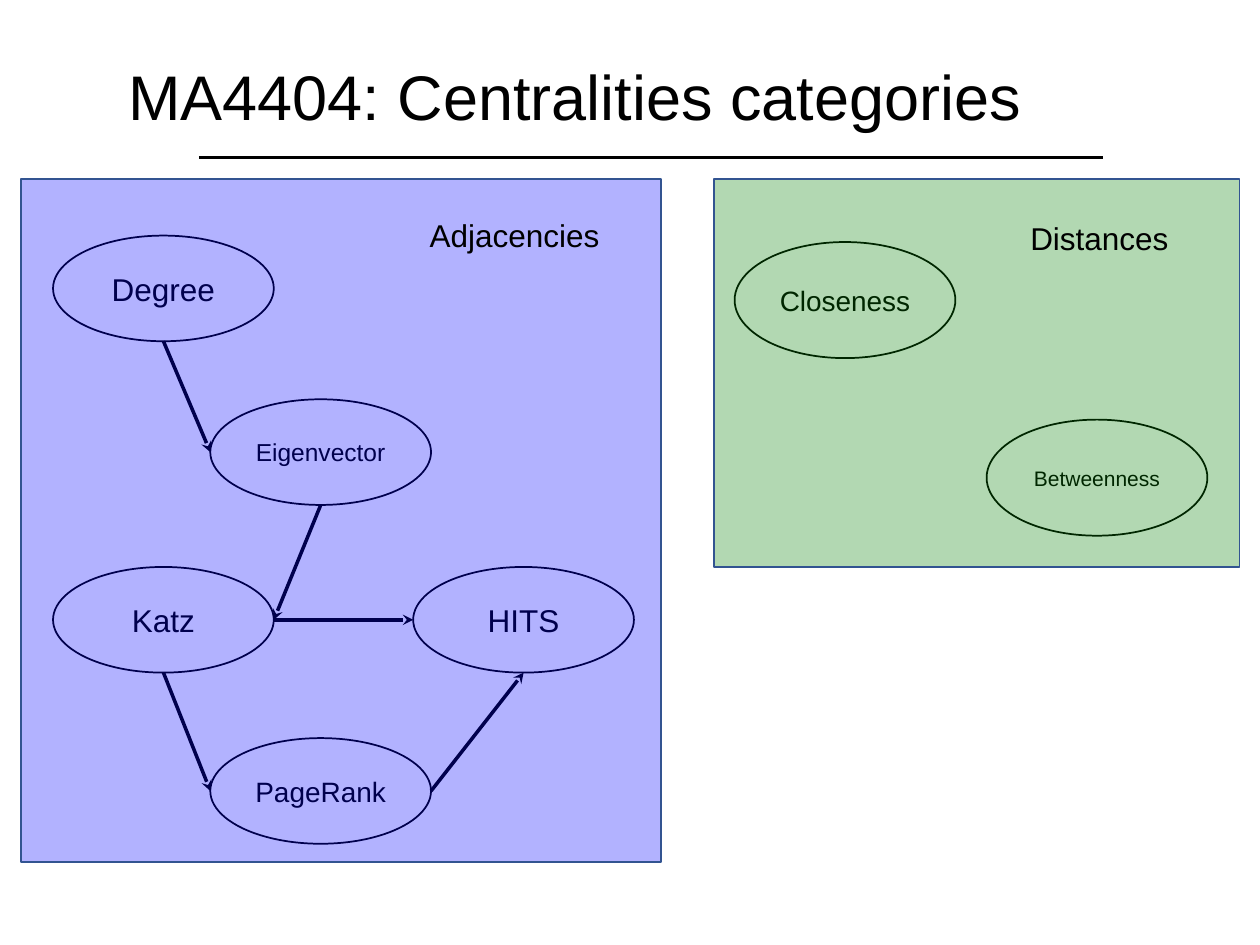
from dataclasses import dataclass

from lxml.etree import SubElement
from pptx import Presentation
from pptx.dml.color import RGBColor
from pptx.enum.shapes import MSO_CONNECTOR, MSO_SHAPE
from pptx.enum.text import MSO_ANCHOR, MSO_AUTO_SIZE, PP_ALIGN
from pptx.oxml.ns import qn
from pptx.util import Cm, Pt


@dataclass(frozen=True)
class Theme:
    font: str = "Arial"
    ink: str = "000000"
    border: str = "325491"
    title: int = 36
    label: int = 18
    rule: float = 1.5
    outline: float = 1
    arrow: float = 2
    alpha: int = 30


THEME = Theme()
TITLE = ("MA4404: Centralities categories", (2.34, 1.17, 21.16, 1.68))
RULE = ((4.01, 3.18), (22.23, 3.18))
NODE_W = 4.45
CATEGORIES = [
    {
        "label": ("Adjacencies", (8.41, 4.24, 3.96, 0.94)),
        "panel": ((0.43, 3.61, 12.9, 13.77), "0000FF"),
        "node_h": 2.13,
        "nodes": {
            "Degree": (1.07, 4.75, 18),
            "Eigenvector": (4.24, 8.05, 14),
            "Katz": (1.07, 11.43, 18),
            "PageRank": (4.24, 14.88, 16),
            "HITS": (8.33, 11.43, 18),
        },
        "links": [
            ("Degree", "bottom", "Eigenvector", "left"),
            ("Eigenvector", "bottom", "Katz", "right"),
            ("Katz", "bottom", "PageRank", "left"),
            ("Katz", "right", "HITS", "left"),
            ("PageRank", "right", "HITS", "bottom"),
        ],
    },
    {
        "label": ("Distances", (20.52, 4.29, 3.33, 1.02)),
        "panel": ((14.4, 3.61, 10.59, 7.82), "008000"),
        "node_h": 2.34,
        "nodes": {"Closeness": (14.81, 4.88, 16), "Betweenness": (19.89, 8.46, 12)},
        "links": [],
    },
]
SIDES = {"left": (0, 0.5), "right": (1, 0.5), "bottom": (0.5, 1)}


def rgb(color):
    return RGBColor.from_string(color)


def write(tf, text, size, align=PP_ALIGN.LEFT):
    p = tf.paragraphs[0]
    p.alignment = align
    r = p.add_run()
    r.text = text
    r.font.name, r.font.size = THEME.font, Pt(size)
    r.font.color.rgb = rgb(THEME.ink)
    return p


def add_text(shapes, text, box, size):
    tf = shapes.add_textbox(*map(Cm, box)).text_frame
    write(tf, text, size)
    return tf


def add_outlined(shapes, kind, box, color):
    sp = shapes.add_shape(kind, *map(Cm, box))
    sp.shadow.inherit = False
    sp.line.color.rgb = rgb(color)
    sp.line.width = Pt(THEME.outline)
    return sp


def add_line(shapes, start, end, width, arrow=False):
    ln = shapes.add_connector(MSO_CONNECTOR.STRAIGHT, *map(Cm, start + end))
    ln.line.color.rgb = rgb(THEME.ink)
    ln.line.width = Pt(width)
    if arrow:
        SubElement(ln.line._get_or_add_ln(), qn("a:tailEnd"), type="stealth")
    SubElement(ln._element.spPr, qn("a:effectLst"))


def add_node(shapes, name, box, size):
    sp = add_outlined(shapes, MSO_SHAPE.OVAL, box, THEME.ink)
    sp.fill.background()
    tf = sp.text_frame
    tf.word_wrap = False
    tf.vertical_anchor = MSO_ANCHOR.MIDDLE
    write(tf, name, size, PP_ALIGN.CENTER)


def add_panel(shapes, box, color):
    sp = add_outlined(shapes, MSO_SHAPE.RECTANGLE, box, THEME.border)
    sp.fill.solid()
    sp.fill.fore_color.rgb = rgb(color)
    clr = sp._element.spPr.find(qn("a:solidFill"))[0]
    SubElement(clr, qn("a:alpha"), val=str(THEME.alpha * 1000))


def add_category(s, cat):
    shapes = s.shapes.add_group_shape().shapes
    nodes, h = cat["nodes"], cat["node_h"]

    def site(name, side):
        x, y, _ = nodes[name]
        fx, fy = SIDES[side]
        return x + fx * NODE_W, y + fy * h

    for name, (x, y, size) in nodes.items():
        add_node(shapes, name, (x, y, NODE_W, h), size)
    for src, out, dst, into in cat["links"]:
        add_line(shapes, site(src, out), site(dst, into), THEME.arrow, arrow=True)
    add_panel(shapes, *cat["panel"])
    tf = add_text(shapes, *cat["label"], THEME.label)
    tf.word_wrap = False
    tf.auto_size = MSO_AUTO_SIZE.SHAPE_TO_FIT_TEXT


def main():
    """Build the slide of centrality measures grouped by category."""
    prs = Presentation()
    prs.slide_width, prs.slide_height = Cm(25.4), Cm(19.05)
    s = prs.slides.add_slide(prs.slide_layouts[6])
    add_line(s.shapes, *RULE, THEME.rule)
    tf = add_text(s.shapes, *TITLE, THEME.title)
    tf.word_wrap = True
    tf.vertical_anchor = MSO_ANCHOR.MIDDLE
    tf.paragraphs[0].line_spacing = 0.9
    for cat in CATEGORIES:
        add_category(s, cat)
    prs.save("out.pptx")


if __name__ == "__main__":
    main()
